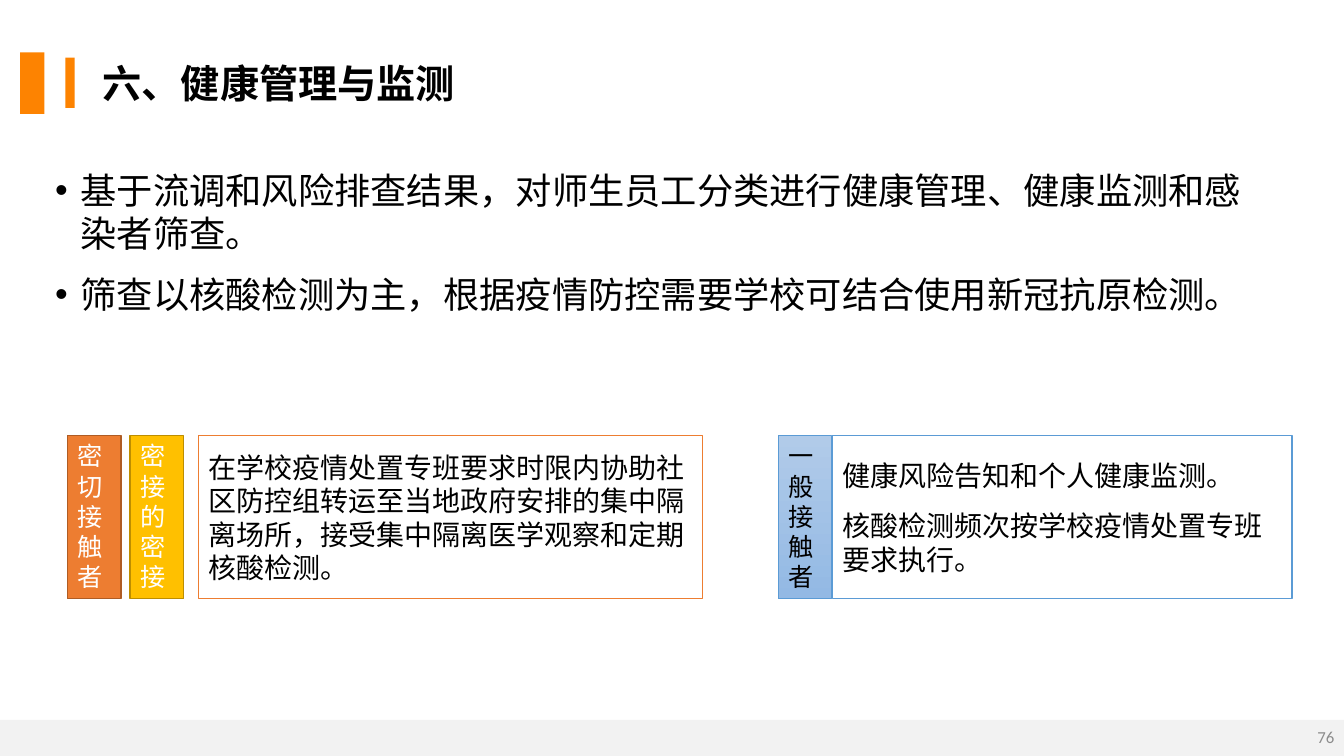
from pptx import Presentation
from pptx.dml.color import RGBColor
from pptx.enum import shapes, text
from pptx.oxml.ns import qn
from pptx.util import Cm, Pt
from lxml import etree

# Content
TITLE = "六、健康管理与监测"
PAGE_NUMBER = "76"
POINTS = [
    "基于流调和风险排查结果，对师生员工分类进行健康管理、健康监测和感染者筛查。",
    "筛查以核酸检测为主，根据疫情防控需要学校可结合使用新冠抗原检测。",
]
CLOSE_MEASURES = [
    "在学校疫情处置专班要求时限内协助社区防控组转运至当地政府安排的集中隔离场所，接受集中隔离医学观察和定期核酸检测。",
]
GENERAL_MEASURES = [
    "健康风险告知和个人健康监测。",
    "核酸检测频次按学校疫情处置专班要求执行。",
]


class Theme:
    sans, serif, number = "Noto Sans CJK SC", "Times New Roman", "Calibri"
    title_size, point_size, card_size, tab_size, number_size = 28, 25.9, 20, 18, 12
    line_factor, gap = 1.2, 6
    black, white, grey, footer = "000000", "FFFFFF", "8C8C8C", "F2F2F2"
    accent, orange, orange_edge = "FD8301", "ED7D31", "AF5C24"
    gold, gold_edge, blue = "FFC000", "BD8E00", "5B9BD5"
    blue_fade = ("B1CBE9", "93B9E4")


# Layout in centimetres
PAGE_WIDTH, PAGE_HEIGHT = 33.87, 19.05
FOOTER_TOP = 18.14
ROW_TOP, ROW_HEIGHT, TAB_WIDTH = 10.98, 4.11, 1.35
ACCENT_BARS = [(1.65, 1.45, 0.23, 1.27), (0.51, 1.32, 0.61, 1.55)]
# left, width, paragraphs, edge, paragraph gap
CARDS = [
    (5.0, 12.7, CLOSE_MEASURES, Theme.orange, 0),
    (20.98, 11.58, GENERAL_MEASURES, Theme.blue, Theme.gap),
]
# left, label, fill, edge, edge width, text colour
TABS = [
    (1.7, "密切接触者", Theme.orange, Theme.orange_edge, 1, Theme.white),
    (3.28, "密接的密接", Theme.gold, Theme.gold_edge, 1, Theme.white),
    (19.61, "一般接触者", Theme.blue_fade, Theme.blue, 0.5, Theme.black),
]


def rgb(code):
    return RGBColor.from_string(code)


def add_box(page, left, top, width, height, fill, edge=None, edge_width=1):
    box = page.shapes.add_shape(shapes.MSO_SHAPE.RECTANGLE,
                                Cm(left), Cm(top), Cm(width), Cm(height))
    box.shadow.inherit = False
    if isinstance(fill, tuple):
        box.fill.gradient()
        box.fill.gradient_angle = 270
        for stop, code in zip(box.fill.gradient_stops, fill):
            stop.color.rgb = rgb(code)
    else:
        box.fill.solid()
        box.fill.fore_color.rgb = rgb(fill)
    if edge:
        box.line.color.rgb = rgb(edge)
        box.line.width = Pt(edge_width)
    else:
        box.line.fill.background()
    return box


def add_text_box(page, left, top, width, height):
    return page.shapes.add_textbox(Cm(left), Cm(top), Cm(width), Cm(height))


def add_bullet(para):
    properties = para._p.get_or_add_pPr()
    properties.set("marL", str(Cm(0.64)))
    properties.set("indent", str(-Cm(0.64)))
    font = etree.SubElement(properties, qn("a:buFont"))
    font.set("typeface", "Arial")
    bullet = etree.SubElement(properties, qn("a:buChar"))
    bullet.set("char", "•")


def write(box, lines, size, color, font=Theme.sans, bold=False, middle=True,
          align=text.PP_ALIGN.LEFT, gap=0, bulleted=False):
    frame = box.text_frame
    frame.word_wrap = True
    frame.vertical_anchor = text.MSO_ANCHOR.MIDDLE if middle else text.MSO_ANCHOR.TOP
    for index, line in enumerate(lines):
        para = frame.add_paragraph() if index else frame.paragraphs[0]
        para.alignment = align
        para.line_spacing = Pt(round(size * Theme.line_factor, 1))
        para.space_before = para.space_after = Pt(gap)
        if bulleted:
            add_bullet(para)
        span = para.add_run()
        span.text = line
        span.font.name = font
        span.font.size = Pt(size)
        span.font.bold = bold
        span.font.color.rgb = rgb(color)
        east_asian = etree.Element(qn("a:ea"))
        east_asian.set("typeface", Theme.sans)
        span.font._element.find(qn("a:latin")).addnext(east_asian)


def main():
    deck = Presentation()
    deck.slide_width, deck.slide_height = Cm(PAGE_WIDTH), Cm(PAGE_HEIGHT)
    page = deck.slides.add_slide(deck.slide_layouts[6])

    # Footer band and accent bars
    add_box(page, 0, FOOTER_TOP, PAGE_WIDTH, PAGE_HEIGHT - FOOTER_TOP, Theme.footer)
    for bar in ACCENT_BARS:
        add_box(page, *bar, Theme.accent)

    # Title, page number and main points
    write(add_text_box(page, 2.34, 1.02, 29.21, 2.16), [TITLE],
          Theme.title_size, Theme.black, bold=True)
    write(add_text_box(page, 26.26, 18.06, 7.62, 1.02), [PAGE_NUMBER],
          Theme.number_size, Theme.grey, Theme.number, align=text.PP_ALIGN.RIGHT)
    write(add_text_box(page, 1.14, 4.11, 30.99, 4.75), POINTS,
          Theme.point_size, Theme.black, Theme.serif, middle=False,
          gap=Theme.gap, bulleted=True)

    # Measures for each contact group
    for left, width, lines, edge, gap in CARDS:
        card = add_box(page, left, ROW_TOP, width, ROW_HEIGHT, Theme.white, edge)
        write(card, lines, Theme.card_size, Theme.black, gap=gap)

    # Narrow tabs naming the groups, one character to a line
    for left, label, fill, edge, edge_width, color in TABS:
        tab = add_box(page, left, ROW_TOP, TAB_WIDTH, ROW_HEIGHT, fill, edge, edge_width)
        write(tab, [label], Theme.tab_size, color, middle=False)

    deck.save("out.pptx")


if __name__ == "__main__":
    main()
